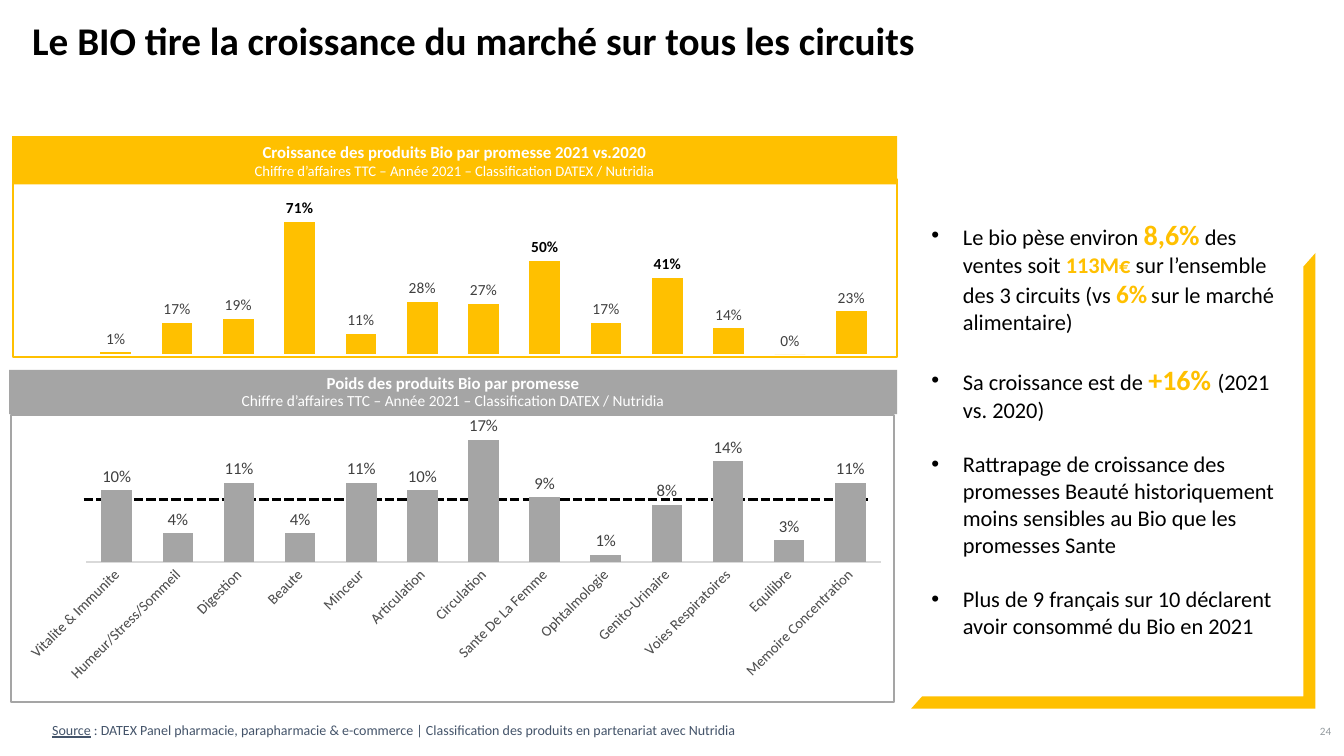
from lxml import etree
from pptx import Presentation
from pptx.chart.data import CategoryChartData
from pptx.dml.color import RGBColor
from pptx.enum.chart import XL_CHART_TYPE as ChartType, XL_LABEL_POSITION as LabelPos, XL_TICK_MARK as Tick
from pptx.enum.dml import MSO_LINE as Dash
from pptx.enum.shapes import MSO_CONNECTOR as Connector, MSO_SHAPE as Shape
from pptx.enum.text import MSO_ANCHOR as Anchor, MSO_AUTO_SIZE as AutoSize, PP_ALIGN as Align
from pptx.oxml import parse_xml
from pptx.oxml.ns import qn
from pptx.util import Pt

COLORS = {"gold": "FFC000", "grey": "A5A5A5", "black": "000000", "white": "FFFFFF",
          "label": "404040", "axis": "595959", "rule": "D9D9D9", "slate": "44546A",
          "number": "959CA0"}
FONT = "Calibri"
CHART_NS = ('xmlns:c="http://schemas.openxmlformats.org/drawingml/2006/chart" '
            'xmlns:a="http://schemas.openxmlformats.org/drawingml/2006/main"')
SUBTITLE = "Chiffre d’affaires TTC – Année 2021 – Classification DATEX / Nutridia"
PROMISES = ["Vitalite & Immunite", "Humeur/Stress/Sommeil", "Digestion", "Beaute", "Minceur",
            "Articulation", "Circulation", "Sante De La Femme", "Ophtalmologie",
            "Genito-Urinaire", "Voies Respiratoires", "Equilibre", "Memoire Concentration"]
GROWTH = [0.01, 0.17, 0.19, 0.71, 0.11, 0.28, 0.27, 0.5, 0.17, 0.41, 0.14, 0, 0.23]
WEIGHT = [0.1, 0.04, 0.11, 0.04, 0.11, 0.1, 0.17, 0.09, 0.01, 0.08, 0.14, 0.03, 0.11]
LEADERS = [3, 7, 9]
# Each finding is a list of (text, size, colour, bold)
FINDINGS = [
    [("Le bio pèse environ ", 16, "black", False), ("8,6%", 20, "gold", True),
     (" des ventes soit ", 16, "black", False), ("113M€ ", 16, "gold", True),
     ("sur l’ensemble des 3 circuits (vs ", 16, "black", False), ("6%", 18, "gold", True),
     (" ", 12, "black", False), ("sur le marché alimentaire)", 16, "black", False)],
    [("Sa croissance est de ", 16, "black", False), ("+16% ", 20, "gold", True),
     ("(2021 vs. 2020)", 16, "black", False)],
    [("Rattrapage de croissance des promesses Beauté historiquement moins sensibles "
      "au Bio que les promesses Sante", 16, "black", False)],
    [("Plus de 9 français sur 10 déclarent avoir consommé du Bio en 2021", 16, "black", False)],
]


def rgb(name):
    return RGBColor.from_string(COLORS[name])


def pts(*lengths):
    return [Pt(length) for length in lengths]


def style(font, size, color, bold=False):
    font.name, font.size, font.bold = FONT, Pt(size), bold
    font.color.rgb = rgb(color)


def add_run(paragraph, text, size, color, bold=False):
    run = paragraph.add_run()
    run.text = text
    style(run.font, size, color, bold)
    return run


def move(shape, box):
    shape.left, shape.top, shape.width, shape.height = pts(*box)


def add_block(slide, kind, box, fill=None, line=None):
    block = slide.shapes.add_shape(kind, *pts(*box))
    block.shadow.inherit = False
    if fill:
        block.fill.solid()
        block.fill.fore_color.rgb = rgb(fill)
    else:
        block.fill.background()
    if line:
        block.line.color.rgb = rgb(line)
        block.line.width = Pt(1.5)
    else:
        block.line.fill.background()
    return block


def add_banner(slide, box, color, heading, subtitle_size, spacing):
    frame = add_block(slide, Shape.RECTANGLE, box, fill=color).text_frame
    frame.word_wrap = True
    frame.vertical_anchor = Anchor.MIDDLE
    frame.text = heading + "\n" + SUBTITLE
    for paragraph, size, bold in zip(frame.paragraphs, (12, subtitle_size), (True, False)):
        paragraph.alignment = Align.CENTER
        paragraph.line_spacing = spacing
        style(paragraph.runs[0].font, size, "white", bold)


def add_columns(slide, box, names, values, color, label_size, top, plot, border=None):
    """Column chart without value axis; plot is the inner area as fractions x, y, w, h."""
    data = CategoryChartData(number_format="0%")
    data.categories = names
    data.add_series("Series 1", values)
    chart = slide.shapes.add_chart(ChartType.COLUMN_CLUSTERED, *pts(*box), data).chart
    style(chart.font, 10, "black")
    chart.has_legend = chart.has_title = False
    chart.value_axis.visible = chart.value_axis.has_major_gridlines = False
    chart.value_axis.minimum_scale, chart.value_axis.maximum_scale = 0, top
    columns = chart.plots[0]
    columns.gap_width, columns.overlap, columns.vary_by_categories = 100, -24, False
    series = columns.series[0]
    series.format.fill.solid()
    series.format.fill.fore_color.rgb = rgb(color)
    labels = series.data_labels
    labels.show_value = True
    labels.number_format, labels.number_format_is_linked = "0%", False
    labels.position = LabelPos.OUTSIDE_END
    style(labels.font, label_size, "label")

    area = chart._chartSpace.chart.plotArea
    for layout in area.findall(qn("c:layout")):
        area.remove(layout)
    layout = parse_xml(f'<c:layout {CHART_NS}><c:manualLayout/></c:layout>')
    settings = [("layoutTarget", "inner"), ("xMode", "edge"), ("yMode", "edge"),
                *zip("xywh", plot)]
    for tag, value in settings:
        etree.SubElement(layout[0], qn("c:" + tag)).set("val", str(value))
    area.insert(0, layout)
    outline = (f'<a:ln w="{Pt(1.5)}"><a:solidFill><a:srgbClr val="{COLORS[border]}"/>'
               '</a:solidFill></a:ln>') if border else '<a:ln><a:noFill/></a:ln>'
    chart._chartSpace.chart.addnext(
        parse_xml(f'<c:spPr {CHART_NS}><a:noFill/>{outline}</c:spPr>'))
    return chart


def add_growth_panel(slide, box):
    x, y, w, h = box
    names = [str(rank + 1) for rank in range(len(GROWTH))]
    chart = add_columns(slide, (x + 32.4, y + 38.2, w - 32.4, 128.9), names, GROWTH, "gold",
                        11, 0.8, (0.033, 0.085, 0.949, 0.829))
    chart.category_axis.visible = False
    for leader in LEADERS:
        label = chart.plots[0].series[0].points[leader].data_label
        style(label.font, 11, "black", True)
        label.position = LabelPos.OUTSIDE_END
    add_banner(slide, (x, y, w, 34.6), "gold",
               "Croissance des produits Bio par promesse 2021 vs.2020", 10.5, 1.0)
    add_block(slide, Shape.RECTANGLE, (x + 0.8, y + 31, w - 0.8, h - 31), line="gold")


def add_weight_panel(slide, box):
    x, y, w, h = box
    average = slide.shapes.add_connector(
        Connector.STRAIGHT, *pts(x + 53.3, y + 92.9, x + 613.4, y + 92.9))
    average.line.color.rgb = rgb("black")
    average.line.width = Pt(2.25)
    average.line.dash_style = Dash.SQUARE_DOT
    etree.SubElement(average._element.spPr, qn("a:effectLst"))
    chart = add_columns(slide, (x + 0.7, y + 31.7, w - 2.1, h - 31.7), PROMISES, WEIGHT, "grey",
                        12, 0.18, (0.085, 0.061, 0.9, 0.45), border="grey")
    axis = chart.category_axis
    axis.major_tick_mark = Tick.NONE
    axis.format.line.color.rgb = rgb("rule")
    axis.format.line.width = Pt(1)
    style(axis.tick_labels.font, 10.5, "axis")
    axis._element.find(qn("c:txPr")).find(qn("a:bodyPr")).set("rot", str(-45 * 60000))
    add_banner(slide, (x, y, w, 31.7), "grey", "Poids des produits Bio par promesse", 11, 0.9)


def add_findings(slide, box):
    x, y, w, h = box
    body = slide.placeholders[1]
    move(body, (x + 7.2, y, 268.6, 349.2))
    frame = body.text_frame
    frame.auto_size = AutoSize.NONE
    frame.vertical_anchor = Anchor.TOP
    for index, finding in enumerate(FINDINGS):
        paragraph = frame.paragraphs[0] if index == 0 else frame.add_paragraph()
        paragraph.space_before = Pt(19.5 if index else 0)
        properties = paragraph._p.get_or_add_pPr()
        properties.set("marL", str(Pt(22.5)))
        properties.set("indent", str(Pt(-22.5)))
        for part in finding:
            add_run(paragraph, *part)
    corner = add_block(slide, Shape.HALF_FRAME, (x, y + 28.8, w, h - 28.8), fill="gold")
    corner.rotation = 180
    corner.adjustments[0] = corner.adjustments[1] = 0.03


def add_title(slide, box):
    title = slide.shapes.title
    move(title, box)
    frame = title.text_frame
    frame.text = "Le BIO tire la croissance du marché sur tous les circuits"
    frame.auto_size = AutoSize.NONE
    frame.vertical_anchor = Anchor.TOP
    frame.paragraphs[0].alignment = Align.LEFT
    frame.paragraphs[0].line_spacing = 0.9
    style(frame.paragraphs[0].runs[0].font, 28, "black", True)


def add_footer(slide, box):
    x, y, w, h = box
    source = slide.shapes.add_textbox(*pts(x, y, 553, h)).text_frame
    add_run(source.paragraphs[0], "Source", 10, "slate").font.underline = True
    add_run(source.paragraphs[0], " : DATEX Panel pharmacie, parapharmacie & e-commerce | "
            "Classification des produits en partenariat avec Nutridia", 10, "slate")
    number = slide.shapes.add_textbox(*pts(x + w - 28, y + 3.6, 28, 13.7)).text_frame
    number.margin_left = number.margin_right = number.margin_top = number.margin_bottom = 0
    number.vertical_anchor = Anchor.MIDDLE
    number.paragraphs[0].alignment = Align.RIGHT
    add_run(number.paragraphs[0], "24", 8, "number")


def main():
    deck = Presentation()
    deck.slide_width, deck.slide_height = pts(960, 540)
    slide = deck.slides.add_slide(deck.slide_layouts[1])
    add_title(slide, (15.8, 12.2, 938.2, 60.5))
    add_weight_panel(slide, (6.5, 264.2, 634.3, 238.3))
    add_growth_panel(slide, (8.6, 97.2, 632.2, 157.7))
    add_findings(slide, (650.9, 151.9, 288.7, 354.2))
    add_footer(slide, (30.2, 511.9, 920.8, 19.4))
    deck.save("out.pptx")


if __name__ == "__main__":
    main()
